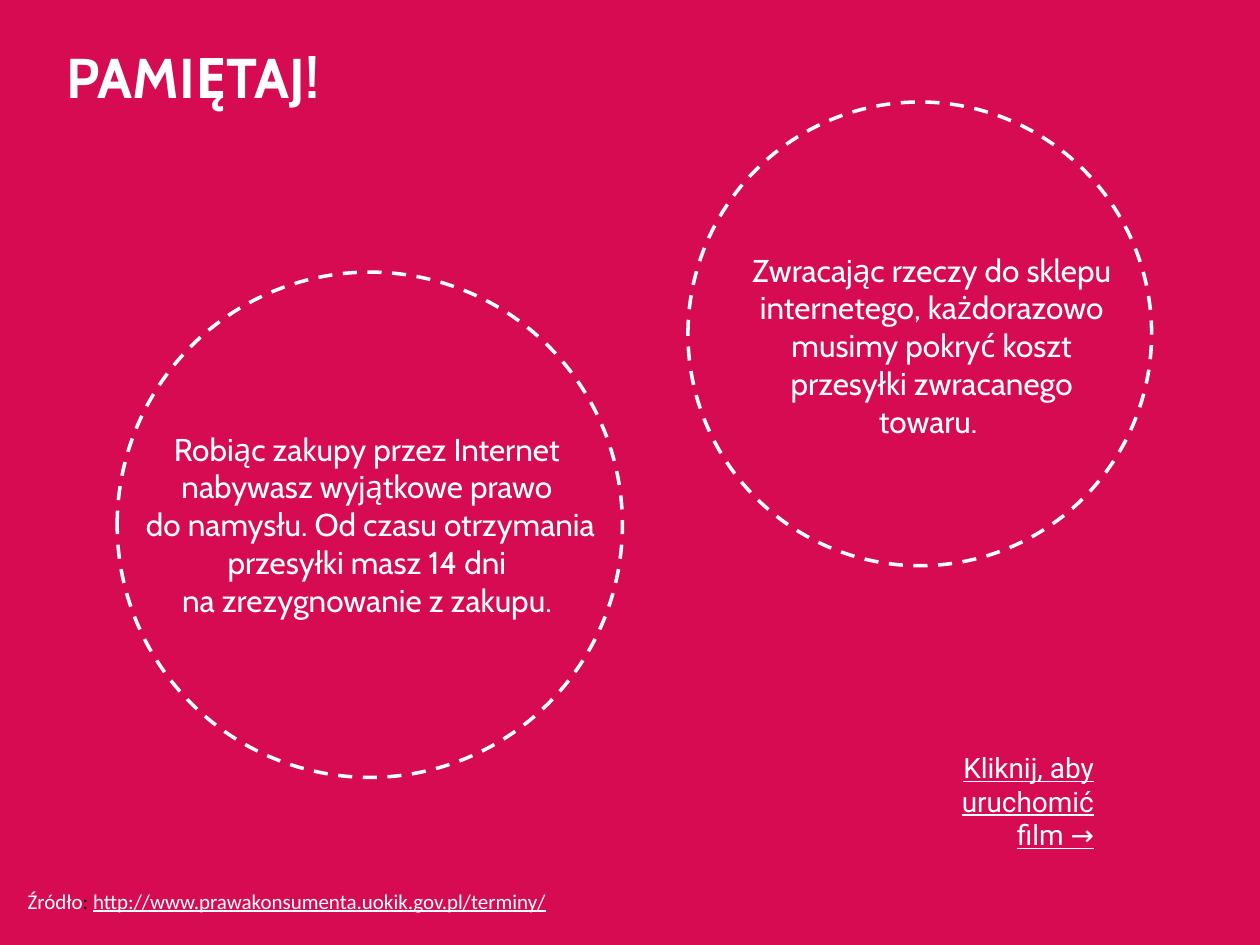
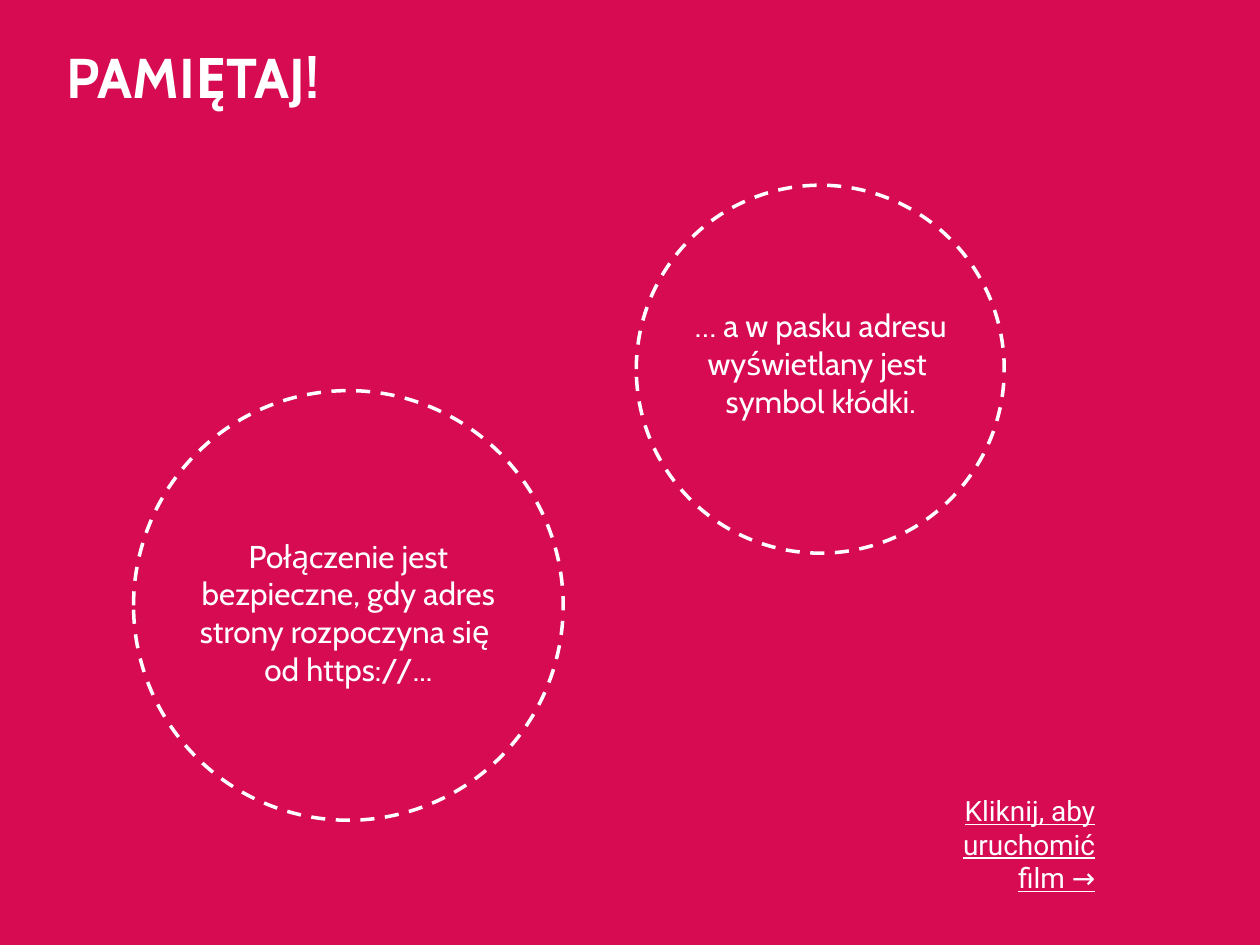
from pptx import Presentation
from pptx.dml.color import RGBColor
from pptx.enum.dml import MSO_LINE
from pptx.enum.shapes import MSO_SHAPE
from pptx.enum.text import MSO_ANCHOR, PP_ALIGN
from pptx.util import Inches, Pt

# Shared style
CRIMSON = RGBColor(0xD6, 0x0B, 0x51)
WHITE = RGBColor(0xFF, 0xFF, 0xFF)
BLACK = RGBColor(0, 0, 0)
HEADING_FONT, LINK_FONT, SOURCE_FONT = "Cabin", "Roboto", "Calibri"
TITLE_ONLY = 5

TITLE = "PAMIĘTAJ!"
FILM_PROMPT = "Kliknij, aby uruchomić film →"
SOURCE_PARTS = [
    ("Źródło", WHITE, False),
    (": ", BLACK, False),
    ("http://www.prawakonsumenta.uokik.gov.pl/terminy/", WHITE, True),
]

# Each reminder: circle (left, top, diameter), text box, wording
REMINDER_SLIDES = [
    {
        "reminders": [
            ((0.93, 2.16, 4.01), (0.63, 3.36, 4.62, 1.62),
             "Robiąc zakupy przez Internet \n"
             "nabywasz wyjątkowe prawo \n"
             "do namysłu. Od czasu otrzymania przesyłki masz 14 dni \n"
             "na zrezygnowanie z zakupu. "),
            ((5.46, 0.81, 3.68), (5.86, 1.94, 3.07, 1.62),
             "Zwracając rzeczy do sklepu internetego, każdorazowo "
             "musimy pokryć koszt przesyłki zwracanego towaru. "),
        ],
        "film_box": (7.18, 5.91, 1.6, 0.91),
        "source_box": (0.12, 7, 9.95, 0.3),
    },
    {
        "reminders": [
            ((5.05, 1.47, 2.92), (4.98, 2.38, 3.07, 1.01),
             "… a w pasku adresu wyświetlany jest \vsymbol kłódki."),
            ((1.06, 3.1, 3.41), (1.23, 4.21, 3.07, 1.31),
             "Połączenie jest bezpieczne, gdy adres strony rozpoczyna się \n"
             "od https://..."),
        ],
        "film_box": (7.19, 6.25, 1.6, 0.91),
        "source_box": None,
    },
]


def style_run(run, font, size, color=WHITE, bold=False, underline=False):
    run.font.name = font
    run.font.size = Pt(size)
    run.font.color.rgb = color
    run.font.bold = bold
    run.font.underline = underline


def write(frame, text, align, font, size, **style):
    frame.text = text
    frame.word_wrap = True
    for paragraph in frame.paragraphs:
        paragraph.alignment = align
        for run in paragraph.runs:
            style_run(run, font, size, **style)


def add_text_frame(slide, box):
    frame = slide.shapes.add_textbox(*map(Inches, box)).text_frame
    frame.word_wrap = True
    return frame


def add_title(slide, left, top, width, height):
    title = slide.shapes.title
    title.left, title.top = Inches(left), Inches(top)
    title.width, title.height = Inches(width), Inches(height)
    title.text_frame.vertical_anchor = MSO_ANCHOR.TOP
    write(title.text_frame, TITLE, PP_ALIGN.LEFT, HEADING_FONT, 32, bold=True)


def add_reminder(slide, circle, box, wording):
    left, top, diameter = map(Inches, circle)
    ring = slide.shapes.add_shape(MSO_SHAPE.OVAL, left, top, diameter, diameter)
    ring.shadow.inherit = False
    ring.fill.background()
    ring.line.color.rgb = WHITE
    ring.line.width = Pt(2)
    ring.line.dash_style = MSO_LINE.DASH
    write(add_text_frame(slide, box), wording, PP_ALIGN.CENTER, HEADING_FONT, 18)


def add_film_prompt(slide, box):
    write(add_text_frame(slide, box), FILM_PROMPT, PP_ALIGN.RIGHT, LINK_FONT, 16,
          underline=True)


def add_source(slide, box):
    paragraph = add_text_frame(slide, box).paragraphs[0]
    for text, color, underline in SOURCE_PARTS:
        run = paragraph.add_run()
        run.text = text
        style_run(run, SOURCE_FONT, 12, color, underline=underline)


def add_reminder_slide(prs, reminders, film_box, source_box):
    slide = prs.slides.add_slide(prs.slide_layouts[TITLE_ONLY])
    slide.background.fill.solid()
    slide.background.fill.fore_color.rgb = CRIMSON
    add_title(slide, 0.43, 0.29, 3.1, 2.73)
    for reminder in reminders:
        add_reminder(slide, *reminder)
    add_film_prompt(slide, film_box)
    if source_box:
        add_source(slide, source_box)


def main():
    prs = Presentation()
    prs.slide_width, prs.slide_height = Inches(10), Inches(7.5)
    for content in REMINDER_SLIDES:
        add_reminder_slide(prs, **content)
    prs.save("out.pptx")


if __name__ == "__main__":
    main()
